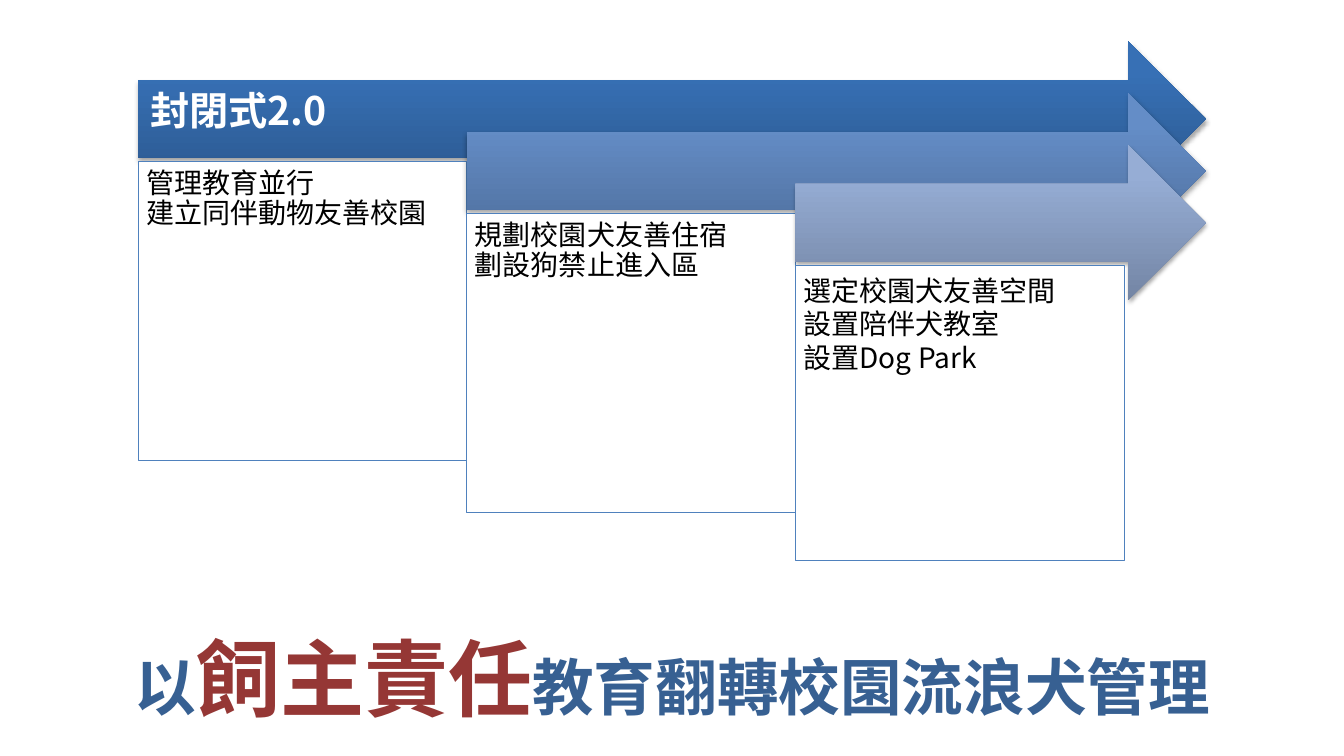
from copy import deepcopy

from lxml.etree import SubElement
from pptx import Presentation
from pptx.dml.color import RGBColor
from pptx.enum.shapes import MSO_SHAPE
from pptx.enum.text import MSO_ANCHOR, MSO_AUTO_SIZE, PP_ALIGN
from pptx.oxml.ns import qn
from pptx.util import Inches, Pt

TEXT_FONT = "Noto Sans CJK SC"
STEP_WIDTH = 3.26
STEP_DROP = 0.515
ARROW_HEIGHT = 1.54
PANEL_OFFSET = 1.19
STEPS = [
    ("封閉式2.0", "管理教育並行\v建立同伴動物友善校園", 2.97, 0.9,
     ["2A568B", "3770B5", "3570B8"]),
    ("", "規劃校園犬友善住宿\v劃設狗禁止進入區", 2.97, 0.9,
     ["4D6C99", "648DC7", "638DCA"]),
    ("", "選定校園犬友善空間\v設置陪伴犬教室\v設置Dog Park", 2.93, 1.0,
     ["7385A4", "96ADD5", "95ADD7"]),
]
TITLE_RUNS = [
    ("以", 44, "376092"),
    ("飼主責任", 60, "953735"),
    ("教育翻轉校園流浪犬管理", 44, "376092"),
]


def color(value):
    """Return the colour for a hex string."""
    return RGBColor.from_string(value)


def add_box(slide, kind, left, top, width, height):
    """Add a preset shape without a shadow, measured in inches."""
    shape = slide.shapes.add_shape(
        kind, Inches(left), Inches(top), Inches(width), Inches(height))
    shape.shadow.inherit = False
    return shape


def fill_gradient(shape, stops):
    """Fill a shape with three stops running from bottom to top."""
    shape.fill.gradient()
    shape.fill.gradient_angle = 90
    stop_list = shape._element.spPr.find(".//" + qn("a:gsLst"))
    stop_list.append(deepcopy(stop_list[-1]))
    for stop, position, value in zip(shape.fill.gradient_stops, (0, 0.8, 1), stops):
        stop.position = position
        stop.color.rgb = color(value)


def cast_shadow(shape):
    """Give a shape a soft shadow straight below it."""
    effects = shape._element.spPr.find(qn("a:effectLst"))
    shadow = SubElement(effects, qn("a:outerShdw"), blurRad=str(Pt(3.1)),
                        dist=str(Pt(1.8)), dir="5400000", rotWithShape="0")
    black = SubElement(shadow, qn("a:srgbClr"), val="000000")
    SubElement(black, qn("a:alpha"), val="35000")


def write_text(shape, text, size, value, anchor, insets, spacing, bold=False):
    """Write one left-aligned paragraph into a shape."""
    frame = shape.text_frame
    frame.word_wrap = True
    frame.vertical_anchor = anchor
    (frame.margin_left, frame.margin_top,
     frame.margin_right, frame.margin_bottom) = map(Inches, insets)
    paragraph = frame.paragraphs[0]
    paragraph.text = text
    paragraph.alignment = PP_ALIGN.LEFT
    paragraph.line_spacing = spacing
    paragraph.font.name = TEXT_FONT
    paragraph.font.size = Pt(size)
    paragraph.font.bold = bold
    paragraph.font.color.rgb = color(value)


def add_step(slide, left, top, right, step):
    """Draw an arrow reaching to the right edge and the panel below it."""
    heading, body, panel_height, spacing, stops = step
    arrow = add_box(slide, MSO_SHAPE.RIGHT_ARROW, left, top, right - left, ARROW_HEIGHT)
    fill_gradient(arrow, stops)
    arrow.line.fill.background()
    cast_shadow(arrow)
    if heading:
        write_text(arrow, heading, 28, "FFFFFF", MSO_ANCHOR.MIDDLE,
                   (0.12, 0.12, 0.28, 0.24), spacing, bold=True)

    panel = add_box(slide, MSO_SHAPE.RECTANGLE, left, top + PANEL_OFFSET,
                    STEP_WIDTH, panel_height)
    panel.fill.solid()
    panel.fill.fore_color.rgb = color("FFFFFF")
    panel.line.color.rgb = color("4F81BD")
    panel.line.width = Pt(0.75)
    write_text(panel, body, 20, "000000", MSO_ANCHOR.TOP, (0.08,) * 4, spacing)


def add_steps(slide, left, top, width):
    """Draw the cascade of steps inside the given box."""
    for index, step in enumerate(STEPS):
        add_step(slide, left + index * STEP_WIDTH, top + index * STEP_DROP,
                 left + width, step)


def set_title(slide, left, top, width, height):
    """Place the title and write its coloured runs."""
    title = slide.shapes.title
    title.left, title.top = Inches(left), Inches(top)
    title.width, title.height = Inches(width), Inches(height)
    frame = title.text_frame
    frame.word_wrap = True
    frame.auto_size = MSO_AUTO_SIZE.NONE
    frame.vertical_anchor = MSO_ANCHOR.MIDDLE
    paragraph = frame.paragraphs[0]
    paragraph.alignment = PP_ALIGN.CENTER
    paragraph.font.name = "Calibri"
    paragraph.font.bold = True
    for text, size, value in TITLE_RUNS:
        run = paragraph.add_run()
        run.text = text
        run.font.size = Pt(size)
        run.font.color.rgb = color(value)


def main():
    """Build the slide and save it."""
    presentation = Presentation()
    presentation.slide_width = Inches(13.33)
    presentation.slide_height = Inches(7.5)
    slide = presentation.slides.add_slide(presentation.slide_layouts[5])
    add_steps(slide, 1.37, 0.41, 10.59)
    set_title(slide, 0.92, 6.12, 11.5, 1.19)
    presentation.save("out.pptx")


if __name__ == "__main__":
    main()
